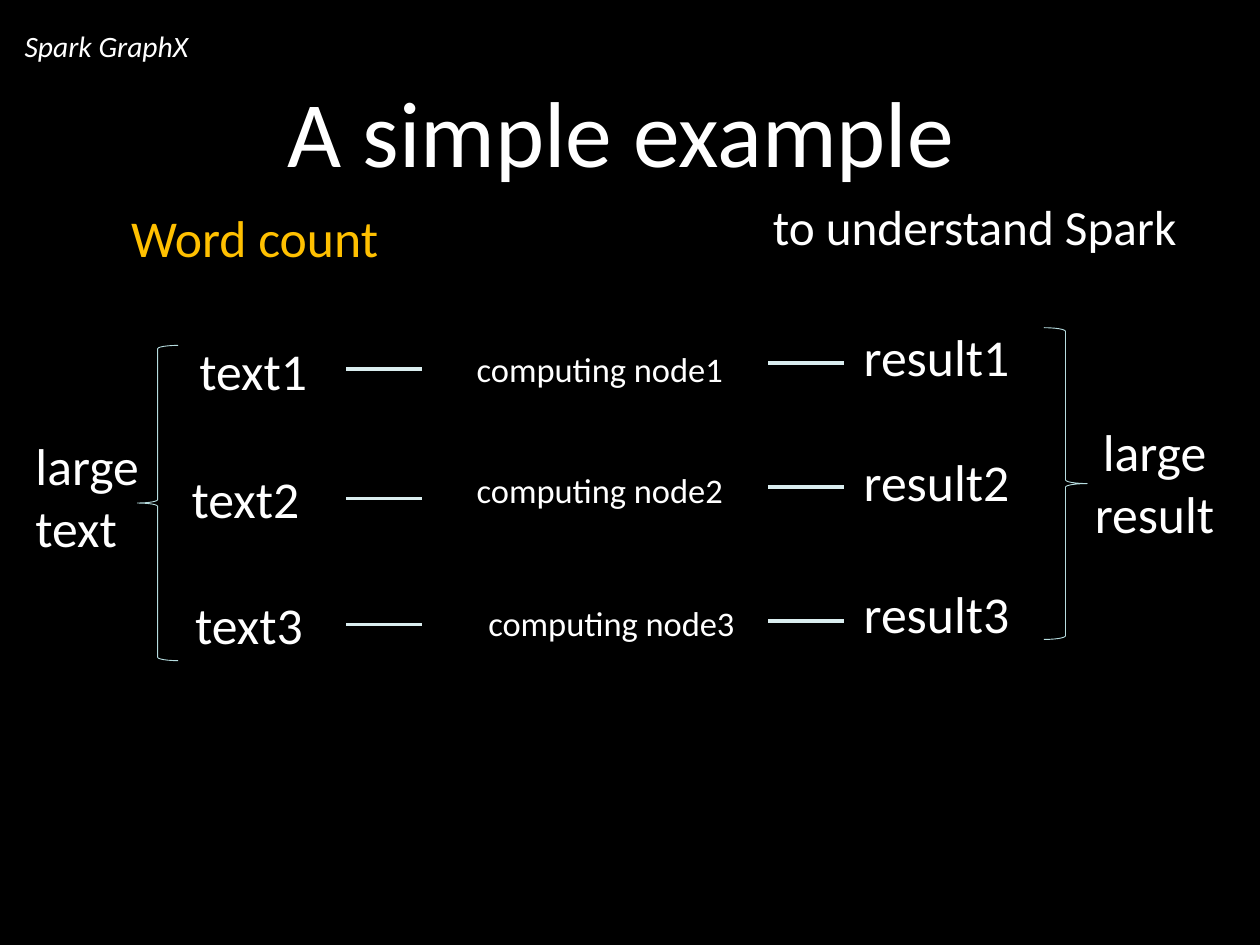
from pptx import Presentation
from pptx import util as u
from pptx.dml import color
from pptx.enum import shapes, text
from pptx.oxml import ns
from lxml import etree

COLORS = {"background": "000000", "text": "FFFFFF", "accent": "FFC000",
          "link": "DAEDEF", "brace": "B6DCDF"}
LEFT, CENTER = text.PP_ALIGN.LEFT, text.PP_ALIGN.CENTER
MIDDLE, BOTTOM = text.MSO_ANCHOR.MIDDLE, text.MSO_ANCHOR.BOTTOM


def rgb(name):
    return color.RGBColor.from_string(COLORS[name])


def inches(*lengths):
    return [u.Inches(length) for length in lengths]


def write(holder, words, size, align=LEFT, anchor=MIDDLE, ink="text",
          italic=False, indent=0.35, insets=(0.06, 0.06)):
    frame = holder.text_frame
    side, end = inches(*insets)
    layout = {"word_wrap": True, "auto_size": text.MSO_AUTO_SIZE.NONE,
              "vertical_anchor": anchor, "margin_left": side,
              "margin_right": side, "margin_top": end, "margin_bottom": end}
    for key, value in layout.items():
        setattr(frame, key, value)
    frame.text = words
    paragraph = frame.paragraphs[0]
    paragraph.alignment = align
    properties = paragraph._p.get_or_add_pPr()
    properties.set("marL", str(u.Inches(indent)))
    properties.set("indent", "0")
    style = {"name": "Calibri", "size": u.Pt(size), "italic": italic}
    for key, value in style.items():
        setattr(paragraph.font, key, value)
    paragraph.font.color.rgb = rgb(ink)


def add_label(slide, box, words, size, **options):
    write(slide.shapes.add_textbox(*inches(*box)), words, size, **options)


def add_link(slide, x, y, length=0.85):
    link = slide.shapes.add_connector(
        shapes.MSO_CONNECTOR.STRAIGHT, *inches(x, y, x + length, y))
    link.line.color.rgb = rgb("link")
    link.line.width = u.Pt(3)
    etree.SubElement(link._element.spPr, ns.qn("a:effectLst"))


def add_brace(slide, box, kind):
    brace = slide.shapes.add_shape(kind, *inches(*box))
    brace.shadow.inherit = False
    brace.fill.background()
    brace.line.color.rgb = rgb("brace")
    brace.line.width = u.Pt(0.75)


def add_header(slide, box):
    x, y, width, height = box
    title = slide.shapes.title
    places = zip(("left", "top", "width", "height"),
                 inches(x + 0.57, y, 12.52, height))
    for key, value in places:
        setattr(title, key, value)
    write(title, "A simple example", 76, align=CENTER)
    add_label(slide, (x + 0.18, y + 0.02, 9.01, 1), "Spark GraphX", 24,
              italic=True, indent=0, insets=(0.1, 0.05))
    add_label(slide, (x + 7.27, y + 1.79, 7.46, 1.15), "to understand Spark",
              40, align=CENTER, anchor=BOTTOM, indent=0)
    add_label(slide, (x + 1.07, y + 1.88, 4.12, 1.58), "Word count", 42,
              ink="accent")


def add_column(slide, box, name, size, cells):
    """Number the labels; each cell is (shift right, shift down, alignment)."""
    x, y, width, height = box
    for number, (right, down, align) in enumerate(cells, 1):
        add_label(slide, (x + right, y + down, width, height),
                  f"{name}{number}", size, align=align)


def add_links(slide, box, drops):
    x, y, length, _ = box
    for drop in drops:
        add_link(slide, x, y + drop, length)


def add_group(slide, box, words, align, brace_box, kind):
    """Place a collective label and the brace measured from its corner."""
    x, y, _, _ = box
    right, down, width, height = brace_box
    add_label(slide, box, words, 42, align=align)
    add_brace(slide, (x + right, y + down, width, height), kind)


def main():
    deck = Presentation()
    deck.slide_width, deck.slide_height = inches(14.22, 10.67)
    slide = deck.slides.add_slide(deck.slide_layouts[5])
    slide.background.fill.solid()
    slide.background.fill.fore_color.rgb = rgb("background")

    # Headings
    add_header(slide, (0, 0, 14.22, 2.94))

    # Split input
    add_group(slide, (-0.01, 4.87, 1.81, 1.45), "large text", LEFT,
              (1.56, -0.97, 0.46, 3.56), shapes.MSO_SHAPE.LEFT_BRACE)
    add_column(slide, (1.69, 3.45, 1.81, 1.45), "text", 42,
               [(0.15, 0, LEFT), (0, 1.45, CENTER), (0.04, 2.87, CENTER)])
    add_links(slide, (3.91, 4.17, 0.85, 2.88), (0, 1.46, 2.88))

    # Computing nodes
    add_column(slide, (4.97, 3.45, 3.57, 1.43), "computing node", 28,
               [(0, 0, LEFT), (0, 1.36, LEFT), (-0.03, 2.87, CENTER)])
    add_links(slide, (8.67, 4.1, 0.86, 2.91), (0, 1.4, 2.91))

    # Merged results
    add_column(slide, (9.1, 3.29, 2.59, 1.45), "result", 42,
               [(0, down, CENTER) for down in (0, 1.41, 2.9)])
    add_group(slide, (11.56, 4.72, 2.59, 1.45), "large result", CENTER,
              (0.22, -1.02, 0.49, 3.52), shapes.MSO_SHAPE.RIGHT_BRACE)

    deck.save("out.pptx")


if __name__ == "__main__":
    main()
